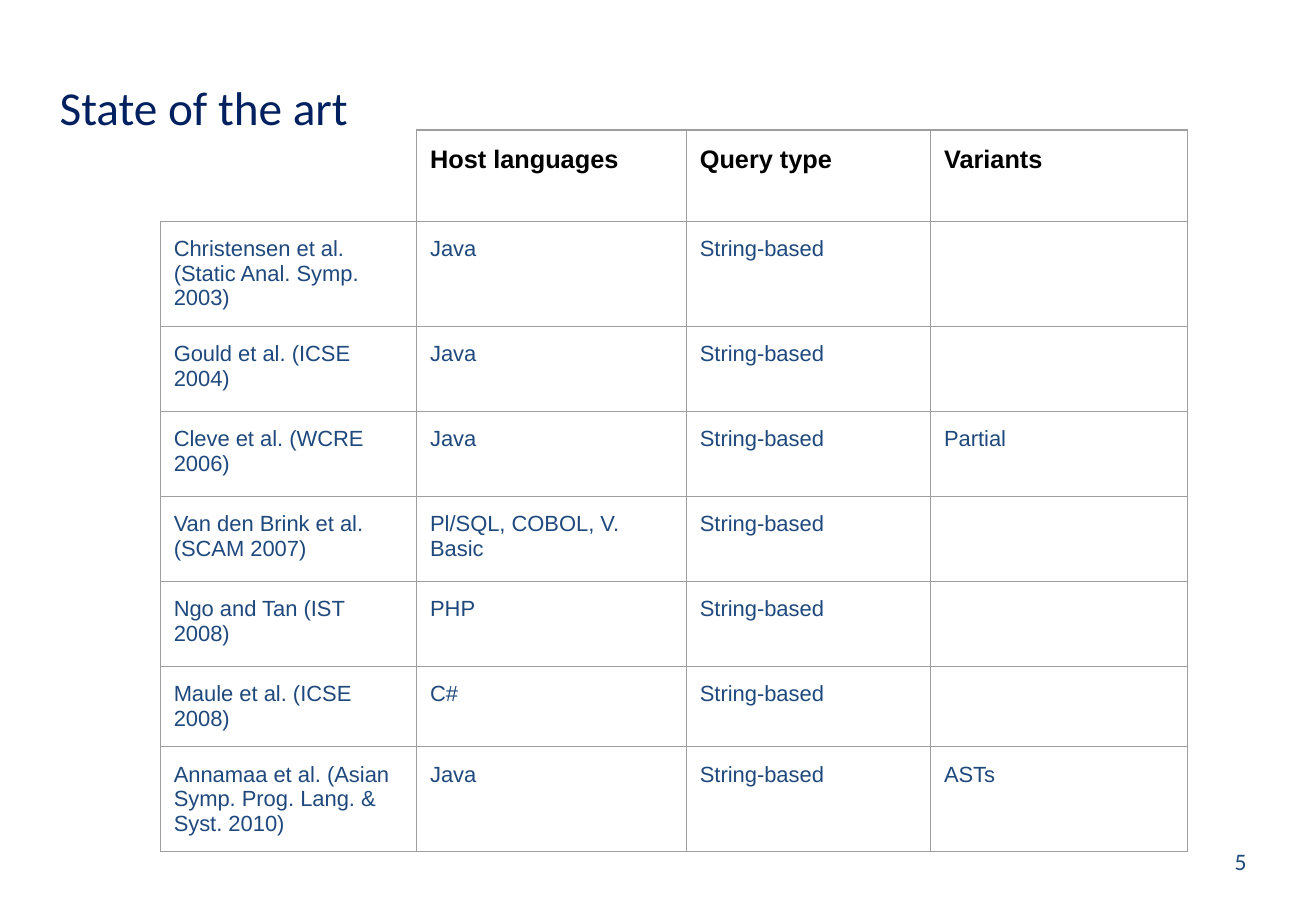
import pptx
import pptx.dml.color
import pptx.enum.text
import pptx.oxml
import pptx.oxml.ns
import pptx.util

Inches = pptx.util.Inches
Pt = pptx.util.Pt
RGBColor = pptx.dml.color.RGBColor
ANCHOR = pptx.enum.text.MSO_ANCHOR

NAVY = RGBColor(0x00, 0x20, 0x60)
BLUE = RGBColor(0x1F, 0x49, 0x7D)
BLACK = RGBColor(0x00, 0x00, 0x00)
GREY = RGBColor(0x9E, 0x9E, 0x9E)

COLUMN_WIDTHS = [2.11, 2.22, 2.01, 2.11]
ROW_HEIGHTS = [0.75, 0.7, 0.7, 0.7, 0.7, 0.7, 0.56, 0.7]
HEADER = ["", "Host languages", "Query type", "Variants"]
APPROACHES = [
    ("Christensen et al. (Static Anal. Symp. 2003)", "Java", ""),
    ("Gould et al. (ICSE 2004)", "Java", ""),
    ("Cleve et al. (WCRE 2006)", "Java", "Partial"),
    ("Van den Brink et al. (SCAM 2007)", "Pl/SQL, COBOL, V. Basic", ""),
    ("Ngo and Tan (IST 2008)", "PHP", ""),
    ("Maule et al. (ICSE 2008)", "C#", ""),
    ("Annamaa et al. (Asian Symp. Prog. Lang. & Syst. 2010)", "Java", "ASTs"),
]


def write(tf, text, size, color, font="Calibri", bold=False, after=0):
    tf.word_wrap = True
    p = tf.paragraphs[0]
    p.alignment = pptx.enum.text.PP_ALIGN.LEFT
    p.space_before = Pt(0)
    p.space_after = Pt(after)
    r = p.add_run()
    r.text = text
    r.font.size = Pt(size)
    r.font.name = font
    r.font.bold = bold
    r.font.color.rgb = color


def set_margins(frame, across, down):
    frame.margin_left = frame.margin_right = Inches(across)
    frame.margin_top = frame.margin_bottom = Inches(down)


def set_borders(cell, sides):
    tcPr = cell._tc.get_or_add_tcPr()
    for i, side in enumerate("LRTB"):
        fill = f'<a:solidFill><a:srgbClr val="{GREY}"/></a:solidFill>' if side in sides else "<a:noFill/>"
        ln = pptx.oxml.parse_xml(
            f'<a:ln{side} {pptx.oxml.ns.nsdecls("a")} w="{Pt(0.75)}">{fill}</a:ln{side}>')
        tcPr.insert(i, ln)


def add_title(s, left, top, width, height):
    sp = s.shapes.title
    sp.left, sp.top = Inches(left), Inches(top)
    sp.width, sp.height = Inches(width), Inches(height)
    tf = sp.text_frame
    set_margins(tf, 0.12, 0.12)
    tf.vertical_anchor = ANCHOR.TOP
    write(tf, "State of the art", 28, NAVY)


def add_comparison(s, left, top, width, height):
    rows = [HEADER] + [(work, host, "String-based", variants) for work, host, variants in APPROACHES]
    table = s.shapes.add_table(len(rows), len(HEADER), Inches(left), Inches(top),
                               Inches(width), Inches(height)).table
    table.first_row = table.horz_banding = False
    for column, w in zip(table.columns, COLUMN_WIDTHS):
        column.width = Inches(w)
    for row, h in zip(table.rows, ROW_HEIGHTS):
        row.height = Inches(h)
    for i, values in enumerate(rows):
        for j, text in enumerate(values):
            cell = table.cell(i, j)
            cell.fill.background()
            set_borders(cell, "RB" if i == j == 0 else "LRTB")
            set_margins(cell, 0.11, 0.13)
            if text and i == 0:
                write(cell.text_frame, text, 15, BLACK, font="Arial", bold=True)
            elif text:
                write(cell.text_frame, text, 13, BLUE, font="Arial", after=16)


def add_page_number(s, left, top, width, height):
    sp = s.shapes.add_textbox(Inches(left), Inches(top), Inches(width), Inches(height))
    tf = sp.text_frame
    set_margins(tf, 0.12, 0.12)
    tf.vertical_anchor = ANCHOR.MIDDLE
    write(tf, "5", 14, BLUE)


def main():
    prs = pptx.Presentation()
    prs.slide_width, prs.slide_height = Inches(10.83), Inches(7.5)
    s = prs.slides.add_slide(prs.slide_layouts[5])
    add_title(s, 0.37, 0.52, 10.09, 0.84)
    add_comparison(s, 1.32, 1.07, sum(COLUMN_WIDTHS), sum(ROW_HEIGHTS))
    add_page_number(s, 10.04, 6.8, 0.65, 0.57)
    prs.save("out.pptx")


if __name__ == "__main__":
    main()
